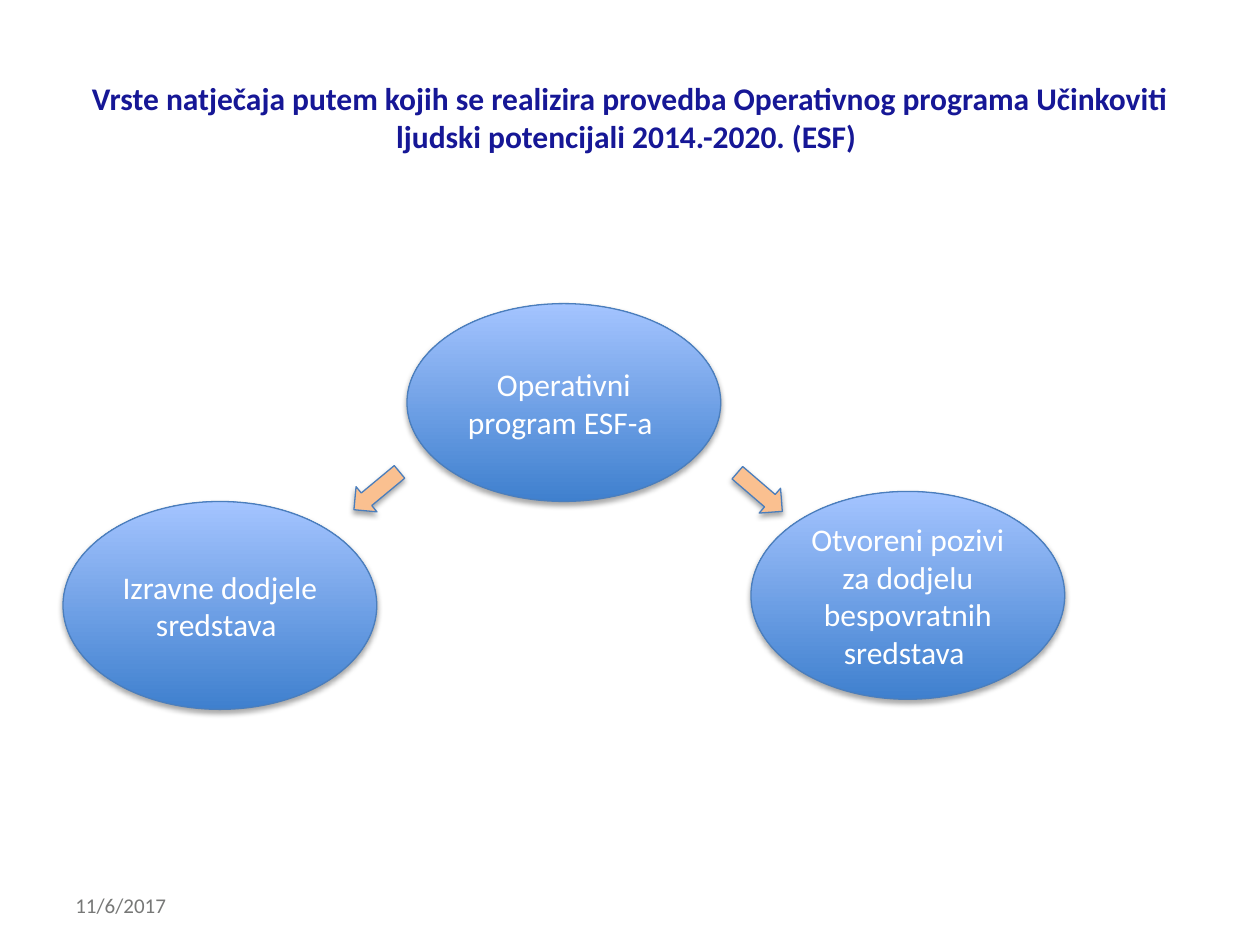
from dataclasses import dataclass

from pptx import Presentation
from pptx.dml.color import RGBColor as Rgb
from pptx.enum.shapes import MSO_SHAPE as Preset
from pptx.enum.text import MSO_ANCHOR as Anchor, MSO_AUTO_SIZE as AutoSize, PP_ALIGN as Align
from pptx.oxml import parse_xml
from pptx.oxml.ns import nsdecls
from pptx.util import Inches, Pt


@dataclass(frozen=True)
class Theme:
    """Colours and type sizes of the slide."""
    font: str = "Calibri"
    heading: str = "161796"
    muted: str = "777877"
    light: str = "FFFFFF"
    outline: str = "4B7EBC"
    arrow: str = "FAC090"
    gradient: tuple = ("3F80CE", "A4C4FF")
    body_size: int = 18
    date_size: int = 12


class SlideBuilder:
    """Holds the theme and the slide, and draws each kind of element."""

    def __init__(self, slide, theme):
        """Keep the slide and its theme."""
        self.slide = slide
        self.theme = theme

    def set_text(self, frame, text, color, size, align, bold=False):
        """Put one formatted paragraph into a text frame."""
        frame.word_wrap = True
        frame.auto_size = AutoSize.NONE
        frame.vertical_anchor = Anchor.MIDDLE
        paragraph = frame.paragraphs[0]
        paragraph.alignment = align
        run = paragraph.add_run()
        run.text = text
        run.font.color.rgb = Rgb.from_string(color)
        formats = {"name": self.theme.font, "size": Pt(size), "bold": bold}
        for name, value in formats.items():
            setattr(run.font, name, value)

    def title(self, text, left, top, width, height):
        """Place and fill the title placeholder."""
        heading = self.slide.shapes.title
        box = {"left": left, "top": top, "width": width, "height": height}
        for name, value in box.items():
            setattr(heading, name, Inches(value))
        self.set_text(heading.text_frame, text, self.theme.heading,
                      self.theme.body_size, Align.CENTER, bold=True)

    def date(self, text, *box):
        """Add the date line."""
        date_box = self.slide.shapes.add_textbox(*map(Inches, box))
        self.set_text(date_box.text_frame, text, self.theme.muted,
                      self.theme.date_size, Align.LEFT)

    def outlined(self, preset, box):
        """Add a preset shape with the shared outline and soft shadow."""
        shape = self.slide.shapes.add_shape(preset, *map(Inches, box))
        shape.line.color.rgb = Rgb.from_string(self.theme.outline)
        shape.line.width = Pt(0.75)
        shape.shadow.inherit = False
        effects = shape._element.spPr.find(
            "{http://schemas.openxmlformats.org/drawingml/2006/main}effectLst")
        effects.append(parse_xml(
            f'<a:outerShdw {nsdecls("a")} blurRad="{Pt(3.1)}" dist="{Pt(1.8)}" '
            'dir="5400000" rotWithShape="0"><a:srgbClr val="000000">'
            '<a:alpha val="35000"/></a:srgbClr></a:outerShdw>'))
        return shape

    def ellipse(self, text, *box):
        """Add a labelled ellipse with a vertical gradient."""
        ellipse = self.outlined(Preset.OVAL, box)
        ellipse.fill.gradient()
        ellipse.fill.gradient_angle = 90
        for position, (stop, color) in enumerate(
                zip(ellipse.fill.gradient_stops, self.theme.gradient)):
            stop.position = position
            stop.color.rgb = Rgb.from_string(color)
        self.set_text(ellipse.text_frame, text, self.theme.light,
                      self.theme.body_size, Align.CENTER)

    def arrow(self, rotation, *box):
        """Add a rotated block arrow."""
        arrow = self.outlined(Preset.UP_ARROW, box)
        arrow.rotation = rotation
        arrow.fill.solid()
        arrow.fill.fore_color.rgb = Rgb.from_string(self.theme.arrow)


def main():
    """Build and save the slide."""
    deck = Presentation()
    deck.slide_width, deck.slide_height = Inches(10), Inches(7.5)
    page = SlideBuilder(deck.slides.add_slide(deck.slide_layouts[5]), Theme())
    page.date("11/6/2017", 0.5, 6.98, 2.33, 0.4)
    page.title("Vrste natječaja putem kojih se realizira provedba Operativnog "
               "programa Učinkoviti ljudski potencijali 2014.-2020. (ESF) ",
               0.5, 0.3, 9, 1.25)
    ellipse_width = 2.49
    for label, left, top, height in (
            ("Operativni program ESF-a ", 3.23, 2.41, 1.57),
            ("Izravne dodjele sredstava ", 0.5, 3.98, 1.65),
            ("Otvoreni pozivi za dodjelu bespovratnih sredstava ", 5.96, 3.9, 1.65)):
        page.ellipse(label, left, top, ellipse_width, height)
    for rotation, left, top in ((230.3, 2.86, 3.66), (130.7, 5.9, 3.67)):
        page.arrow(rotation, left, top, 0.26, 0.47)
    deck.save("out.pptx")


if __name__ == "__main__":
    main()
